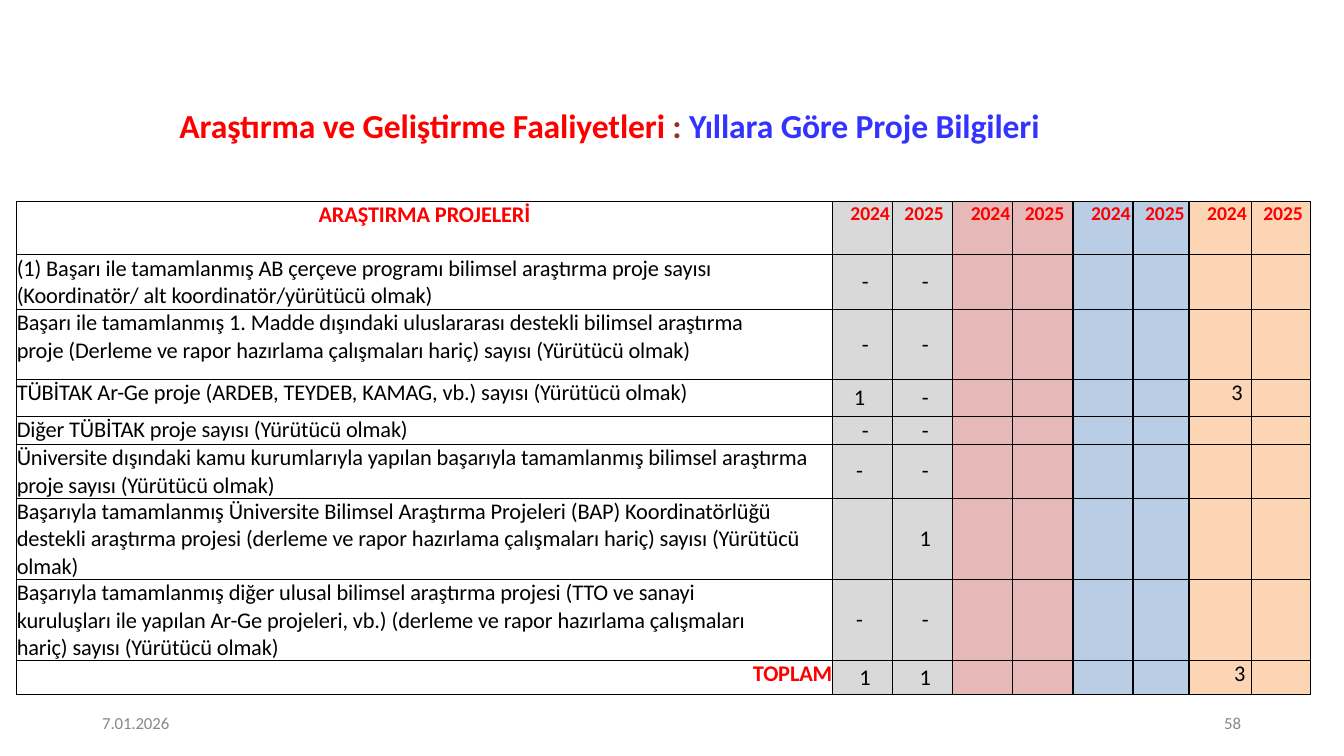
"""Build the slide of research projects by year."""
from dataclasses import dataclass
from lxml import etree
from pptx import Presentation
from pptx.dml.color import RGBColor
from pptx.enum.text import MSO_ANCHOR, PP_ALIGN
from pptx.oxml.ns import qn
from pptx.util import Pt

LEFT, CENTER, RIGHT = PP_ALIGN.LEFT, PP_ALIGN.CENTER, PP_ALIGN.RIGHT
TOP, MIDDLE = MSO_ANCHOR.TOP, MSO_ANCHOR.MIDDLE


@dataclass(frozen=True)
class Theme:
    font: str = "Calibri"
    red: str = "FF0000"
    brown: str = "952D2D"
    blue: str = "3333FF"
    black: str = "000000"
    grey: str = "888888"
    bands: tuple = ("D9D9D9", "E6B9B8", "B9CDE5", "FCD5B5")
    title: int = 24
    body: int = 16
    year: int = 14
    footer: int = 12
    spacing: str = "-8"


theme = Theme()


def add_run(p, text, size, color, bold=False):
    r = p.add_run()
    r.text = text
    r.font.name = theme.font
    r.font.size = Pt(size)
    r.font.bold = bold
    r.font.color.rgb = RGBColor.from_string(color)
    r.font._element.set("spc", theme.spacing)


def fill_cell(cell, text, size, color, bold, align, anchor, left=0, right=0):
    cell.margin_top = cell.margin_bottom = 0
    cell.margin_left, cell.margin_right = Pt(left), Pt(right)
    cell.vertical_anchor = anchor
    p = cell.text_frame.paragraphs[0]
    p.alignment = align
    if text:
        add_run(p, text, size, color, bold)
    else:
        etree.SubElement(p._p, qn("a:endParaRPr")).set("sz", str(size * 100))


prs = Presentation()
prs.slide_width, prs.slide_height = Pt(960), Pt(540)
s = prs.slides.add_slide(prs.slide_layouts[6])

title_runs = [
    ("Araştırma ve Geliştirme Faaliyetleri ", theme.red, True),
    (": ", theme.brown, True),
    ("Yıllara Göre Proje Bilgileri", theme.blue, True),
]
text_boxes = [
    (128.2, 75, 721, 39, theme.title, title_runs),
    (73, 509, 51, 15, theme.footer, [("7.01.2026", theme.grey, False)]),
    (874.5, 509, 17, 15, theme.footer, [("58", theme.grey, False)]),
]
for x, y, w, h, size, runs in text_boxes:
    tf = s.shapes.add_textbox(Pt(x), Pt(y), Pt(w), Pt(h)).text_frame
    tf.word_wrap = True
    tf.margin_left = tf.margin_top = tf.margin_right = tf.margin_bottom = 0
    for text, color, bold in runs:
        add_run(tf.paragraphs[0], text, size, color, bold)

col_widths = [582.5, 43, 43, 43, 43, 43, 40, 44.5, 42]
row_heights = [38, 39, 50, 26.5, 20, 38.5, 58, 58, 24]
projects = [
    "(1) Başarı ile tamamlanmış AB çerçeve programı bilimsel araştırma proje sayısı "
    "(Koordinatör/ alt koordinatör/yürütücü olmak)",
    "Başarı ile tamamlanmış 1. Madde dışındaki uluslararası destekli bilimsel araştırma "
    "proje (Derleme ve rapor hazırlama çalışmaları hariç) sayısı (Yürütücü olmak)",
    "TÜBİTAK Ar-Ge proje (ARDEB, TEYDEB, KAMAG, vb.) sayısı (Yürütücü olmak)",
    "Diğer TÜBİTAK proje sayısı (Yürütücü olmak)",
    "Üniversite dışındaki kamu kurumlarıyla yapılan başarıyla tamamlanmış bilimsel "
    "araştırma proje sayısı (Yürütücü olmak)",
    "Başarıyla tamamlanmış Üniversite Bilimsel Araştırma Projeleri (BAP) Koordinatörlüğü "
    "destekli araştırma projesi (derleme ve rapor hazırlama çalışmaları hariç) sayısı "
    "(Yürütücü olmak)",
    "Başarıyla tamamlanmış diğer ulusal bilimsel araştırma projesi (TTO ve sanayi "
    "kuruluşları ile yapılan Ar-Ge projeleri, vb.) (derleme ve rapor hazırlama "
    "çalışmaları hariç) sayısı (Yürütücü olmak)",
]
narrow_rows = {2, 7}
total_row = len(projects) + 1
first_year = ["-", "-", "1", "-", "-", "", "-", "1"]
second_year = ["-", "-", "-", "-", "-", "1", "-", "1"]
left_shifted = {(3, 1), (5, 1), (7, 1)}
last_band_counts = {(3, 7): 24, (total_row, 7): 28}

table = s.shapes.add_table(len(row_heights), len(col_widths), Pt(12), Pt(144),
                           Pt(sum(col_widths)), Pt(sum(row_heights))).table
table.first_row = table.horz_banding = False
for column, width in zip(table.columns, col_widths):
    column.width = Pt(width)
for row, height in zip(table.rows, row_heights):
    row.height = Pt(height)

body = (theme.body, theme.black, False)
heading = (theme.body, theme.red, True)
fill_cell(table.cell(0, 0), "ARAŞTIRMA PROJELERİ", *heading, CENTER, TOP)
for i, project in enumerate(projects, 1):
    fill_cell(table.cell(i, 0), project, *body, LEFT, TOP,
              right=36 if i in narrow_rows else 0)
fill_cell(table.cell(total_row, 0), "TOPLAM", *heading, RIGHT, TOP)

for j in range(1, len(col_widths)):
    year, indent = ("2024", 13) if j % 2 else ("2025", 8.6)
    fill_cell(table.cell(0, j), year, theme.year, theme.red, True, LEFT, TOP, left=indent)
    for i in range(1, len(row_heights)):
        cell = table.cell(i, j)
        if j <= 2:
            count = (first_year, second_year)[j - 1][i - 1]
            left, right = (0, 4) if (i, j) in left_shifted else (4, 0)
            fill_cell(cell, count, *body, CENTER, MIDDLE, left, right)
        else:
            indent = last_band_counts.get((i, j), 0)
            fill_cell(cell, "3" if indent else "", *body, CENTER, TOP, left=indent)

for i in range(len(row_heights)):
    for j in range(len(col_widths)):
        cell = table.cell(i, j)
        tc_pr = cell._tc.get_or_add_tcPr()
        for side in ("lnL", "lnR", "lnT", "lnB"):
            ln = etree.SubElement(tc_pr, qn(f"a:{side}"), w=str(Pt(1)))
            solid = etree.SubElement(ln, qn("a:solidFill"))
            etree.SubElement(solid, qn("a:srgbClr"), val=theme.black)
        if j:
            cell.fill.solid()
            cell.fill.fore_color.rgb = RGBColor.from_string(theme.bands[(j - 1) // 2])
        else:
            cell.fill.background()

prs.save("out.pptx")
